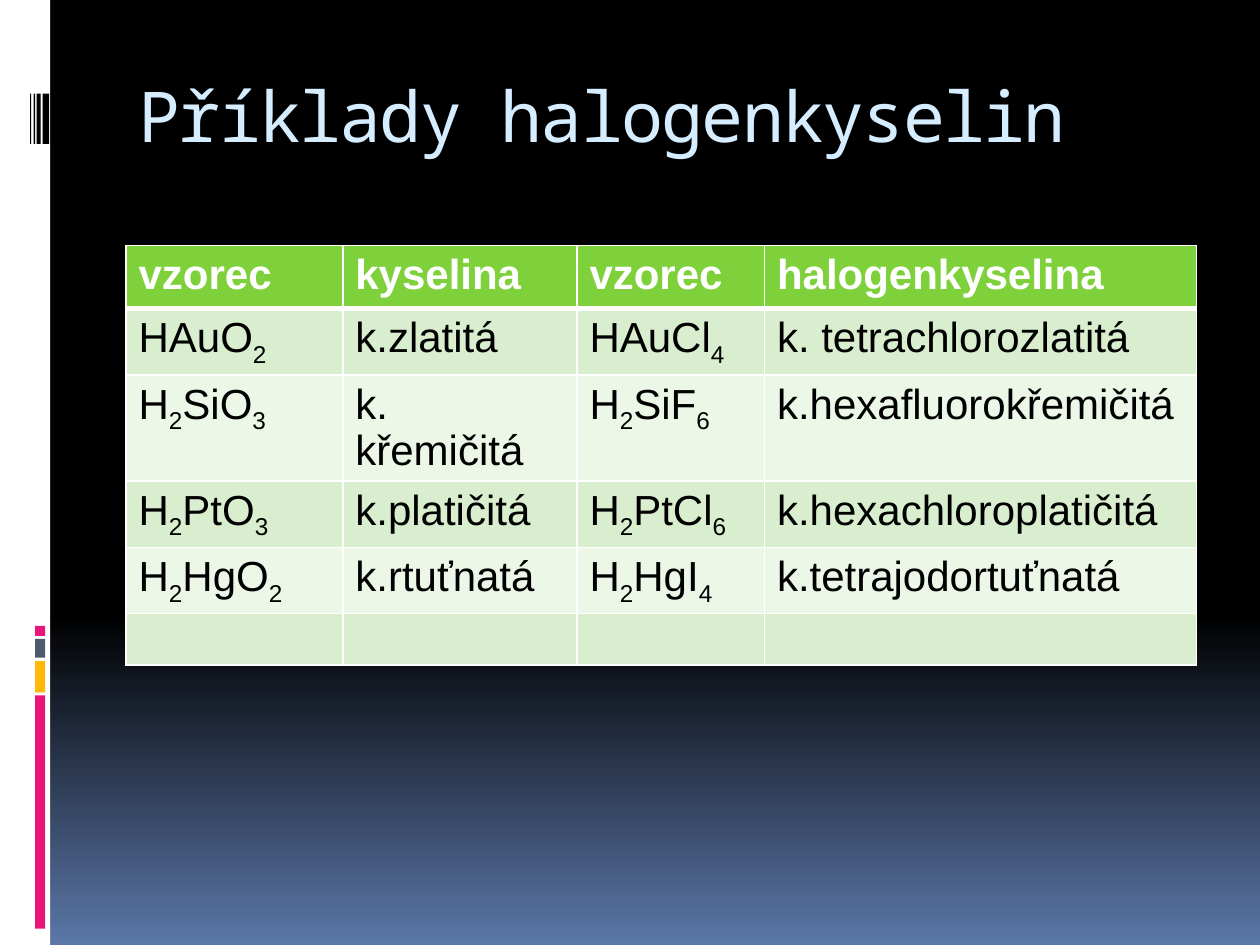
from itertools import groupby

from lxml.etree import SubElement
from pptx import Presentation
from pptx.dml.color import RGBColor
from pptx.enum.shapes import MSO_SHAPE as SHAPE
from pptx.enum.text import MSO_ANCHOR as ANCHOR, MSO_AUTO_SIZE as AUTO, PP_ALIGN as ALIGN
from pptx.oxml.ns import qn
from pptx.util import Cm, Pt

BLACK = RGBColor(0x00, 0x00, 0x00)
WHITE = RGBColor(0xFF, 0xFF, 0xFF)
BLUE = RGBColor(0x5B, 0x77, 0xA8)
PALE_BLUE = RGBColor(0xD6, 0xEC, 0xFF)
PINK = RGBColor(0xEA, 0x15, 0x7A)
AMBER = RGBColor(0xFE, 0xB8, 0x0A)
SLATE = RGBColor(0x4E, 0x5B, 0x6F)
GREEN = RGBColor(0x7F, 0xD1, 0x3B)
BANDS = (RGBColor(0xD8, 0xEE, 0xCE), RGBColor(0xEC, 0xF7, 0xE8))

# Content
TITLE = "Příklady halogenkyselin"
ROWS = [
    ("vzorec", "kyselina", "vzorec", "halogenkyselina"),
    ("HAuO2", "k.zlatitá", "HAuCl4", "k. tetrachlorozlatitá"),
    ("H2SiO3", "k. křemičitá", "H2SiF6", "k.hexafluorokřemičitá"),
    ("H2PtO3", "k.platičitá", "H2PtCl6", "k.hexachloroplatičitá"),
    ("H2HgO2", "k.rtuťnatá", "H2HgI4", "k.tetrajodortuťnatá"),
    ("", "", "", ""),
]

# Geometry in cm
SLIDE_W, SLIDE_H = 25.4, 19.05
STRIP_W = 1.01
COL_W = (4.37, 4.72, 3.78, 8.71)
HEAD_H, ROW_H = 1.27, 1.04
BLOCK_X, BLOCK_W = 0.71, 0.2
BLOCKS = [(12.62, 0.2, PINK), (12.88, 0.38, SLATE), (13.33, 0.63, AMBER), (14.02, 4.7, PINK)]
BARCODE_Y, BARCODE_H = 1.89, 1.01
BARCODE = [(0.61, 0.02), (0.68, 0.03), (0.74, 0.08), (0.86, 0.13)]


def add_bar(s, x, y, w, h, color):
    sp = s.shapes.add_shape(SHAPE.RECTANGLE, Cm(x), Cm(y), Cm(w), Cm(h))
    sp.shadow.inherit = False
    sp.fill.solid()
    sp.fill.fore_color.rgb = color
    sp.line.fill.background()


def add_run(p, text, color, **formats):
    r = p.add_run()
    r.text = text
    r.font.color.rgb = color
    for name, value in formats.items():
        setattr(r.font, name, value)
    return r


def set_borders(cell, bottom):
    tc_pr = cell._tc.get_or_add_tcPr()
    widths = {"a:lnL": 1, "a:lnR": 1, "a:lnT": 1, "a:lnB": bottom}
    for i, (tag, width) in enumerate(widths.items()):
        ln = SubElement(tc_pr, qn(tag), w=str(Pt(width)))
        fill = SubElement(ln, qn("a:solidFill"))
        SubElement(fill, qn("a:srgbClr"), val=str(WHITE))
        tc_pr.insert(i, ln)


def fill_cell(cell, text, row):
    head = row == 0
    cell.fill.solid()
    cell.fill.fore_color.rgb = GREEN if head else BANDS[(row - 1) % 2]
    set_borders(cell, 3 if head else 1)
    # Digits in a formula are subscripts
    for is_digit, chars in groupby(text, str.isdigit):
        r = add_run(cell.text_frame.paragraphs[0], "".join(chars),
                    WHITE if head else BLACK, name="Arial", size=Pt(24), bold=head)
        if is_digit:
            r._r.get_or_add_rPr().set("baseline", "-25000")


def main():
    prs = Presentation()
    prs.slide_width, prs.slide_height = Cm(SLIDE_W), Cm(SLIDE_H)
    s = prs.slides.add_slide(prs.slide_layouts[5])

    # Background: black down to 65 %, then fading to blue
    bg = s.background.fill
    bg.gradient()
    bg.gradient_angle = 270
    for stop, position, color in zip(bg.gradient_stops, (0.65, 1), (BLACK, BLUE)):
        stop.position, stop.color.rgb = position, color

    # Left strip with coloured blocks and barcode
    add_bar(s, 0, 0, STRIP_W, SLIDE_H, WHITE)
    for y, h, color in BLOCKS:
        add_bar(s, BLOCK_X, y, BLOCK_W, h, color)
    for x, w in BARCODE:
        add_bar(s, x, BARCODE_Y, w, BARCODE_H, BLACK)

    # Title
    title = s.shapes.title
    title.left, title.top, title.width, title.height = Cm(2.54), Cm(1.42), Cm(21.59), Cm(2.54)
    tf = title.text_frame
    formats = {"word_wrap": True, "auto_size": AUTO.NONE,
               "vertical_anchor": ANCHOR.TOP, "margin_top": Cm(0.04)}
    for name, value in formats.items():
        setattr(tf, name, value)
    p = tf.paragraphs[0]
    p.alignment = ALIGN.LEFT
    r = add_run(p, TITLE, PALE_BLUE, name="Noto Sans Mono", size=Pt(40))
    r._r.get_or_add_rPr().set("spc", "-100")

    # Table
    heights = [HEAD_H] + [ROW_H] * (len(ROWS) - 1)
    table = s.shapes.add_table(len(ROWS), len(COL_W), Cm(2.54), Cm(4.95),
                               Cm(sum(COL_W)), Cm(sum(heights))).table
    for col, w in zip(table.columns, COL_W):
        col.width = Cm(w)
    for i, (texts, h) in enumerate(zip(ROWS, heights)):
        table.rows[i].height = Cm(h)
        for j, text in enumerate(texts):
            fill_cell(table.cell(i, j), text, i)

    prs.save("out.pptx")


if __name__ == "__main__":
    main()
